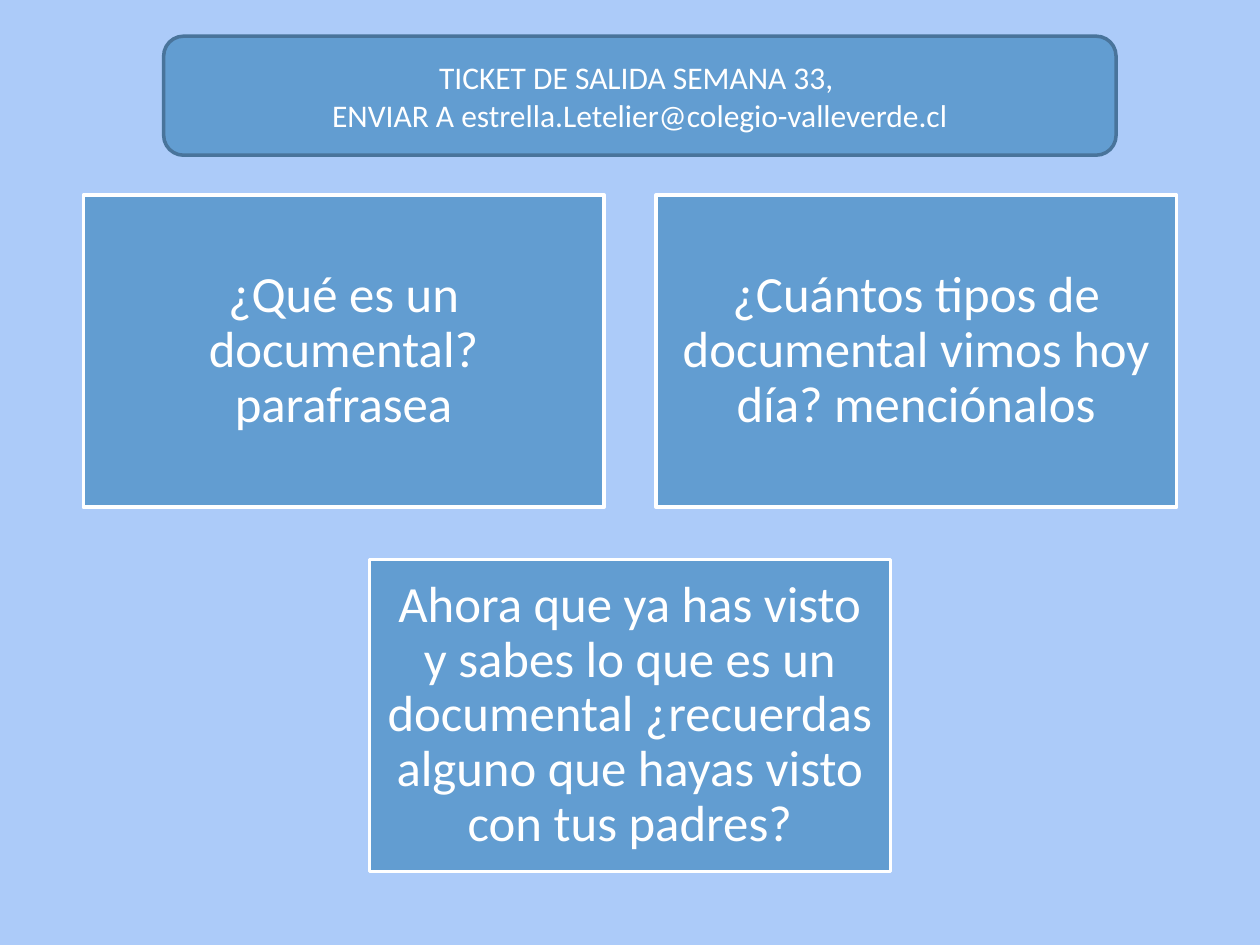
from pptx import Presentation
from pptx.dml.color import RGBColor
from pptx.enum.shapes import MSO_SHAPE
from pptx.enum.text import MSO_ANCHOR, PP_ALIGN
from pptx.util import Cm, Pt

RECT = MSO_SHAPE.RECTANGLE
ROUND = MSO_SHAPE.ROUNDED_RECTANGLE
MIDDLE = MSO_ANCHOR.MIDDLE
CENTER = PP_ALIGN.CENTER

FONT = "Calibri"
COLORS = {"back": "ACCBF9", "fill": "629DD1", "edge": "49749B", "white": "FFFFFF"}

HEAD = ["TICKET DE SALIDA SEMANA 33, ", "ENVIAR A estrella.Letelier@colegio-valleverde.cl"]
ASKS = [
    "¿Qué es un documental? parafrasea",
    "¿Cuántos tipos de documental vimos hoy día? menciónalos",
    "Ahora que ya has visto y sabes lo que es un documental "
    "¿recuerdas alguno que hayas visto con tus padres?",
]


def color(name):
    return RGBColor.from_string(COLORS[name])


def add_box(slide, kind, box, edge, lines, size, space=1.0):
    shape = slide.shapes.add_shape(kind, *(Cm(n) for n in box))
    shape.shadow.inherit = False
    shape.fill.solid()
    shape.fill.fore_color.rgb = color("fill")
    shape.line.color.rgb = color(edge)
    shape.line.width = Pt(2)
    frame = shape.text_frame
    frame.word_wrap = True
    frame.vertical_anchor = MIDDLE
    for i, line in enumerate(lines):
        para = frame.paragraphs[0] if i == 0 else frame.add_paragraph()
        para.alignment = CENTER
        para.line_spacing = space
        run = para.add_run()
        run.text = line
        run.font.name = FONT
        run.font.size = Pt(size)
        run.font.color.rgb = color("white")
    return frame


def add_head(slide, box):
    add_box(slide, ROUND, box, "edge", HEAD, 18)


def add_cards(slide, box, gap=1.05, cols=2, rows=2, inset=0.3):
    left, top, width, height = box
    wide = (width - gap * (cols - 1)) / cols
    high = (height - gap * (rows - 1)) / rows
    for i, ask in enumerate(ASKS):
        row, col = divmod(i, cols)
        count = min(cols, len(ASKS) - row * cols)
        start = left + (width - count * wide - (count - 1) * gap) / 2
        place = (start + col * (wide + gap), top + row * (high + gap), wide, high)
        frame = add_box(slide, RECT, place, "white", [ask], 29, 0.9)
        frame.margin_left = frame.margin_right = Cm(inset)
        frame.margin_top = frame.margin_bottom = Cm(inset)


def main():
    deck = Presentation()
    deck.slide_width = Cm(25.4)
    deck.slide_height = Cm(19.05)
    slide = deck.slides.add_slide(deck.slide_layouts[6])
    back = slide.background.fill
    back.solid()
    back.fore_color.rgb = color("back")
    add_head(slide, (3.3, 0.73, 19.2, 2.4))
    add_cards(slide, (1.68, 3.93, 22.04, 13.64))
    deck.save("out.pptx")


if __name__ == "__main__":
    main()
